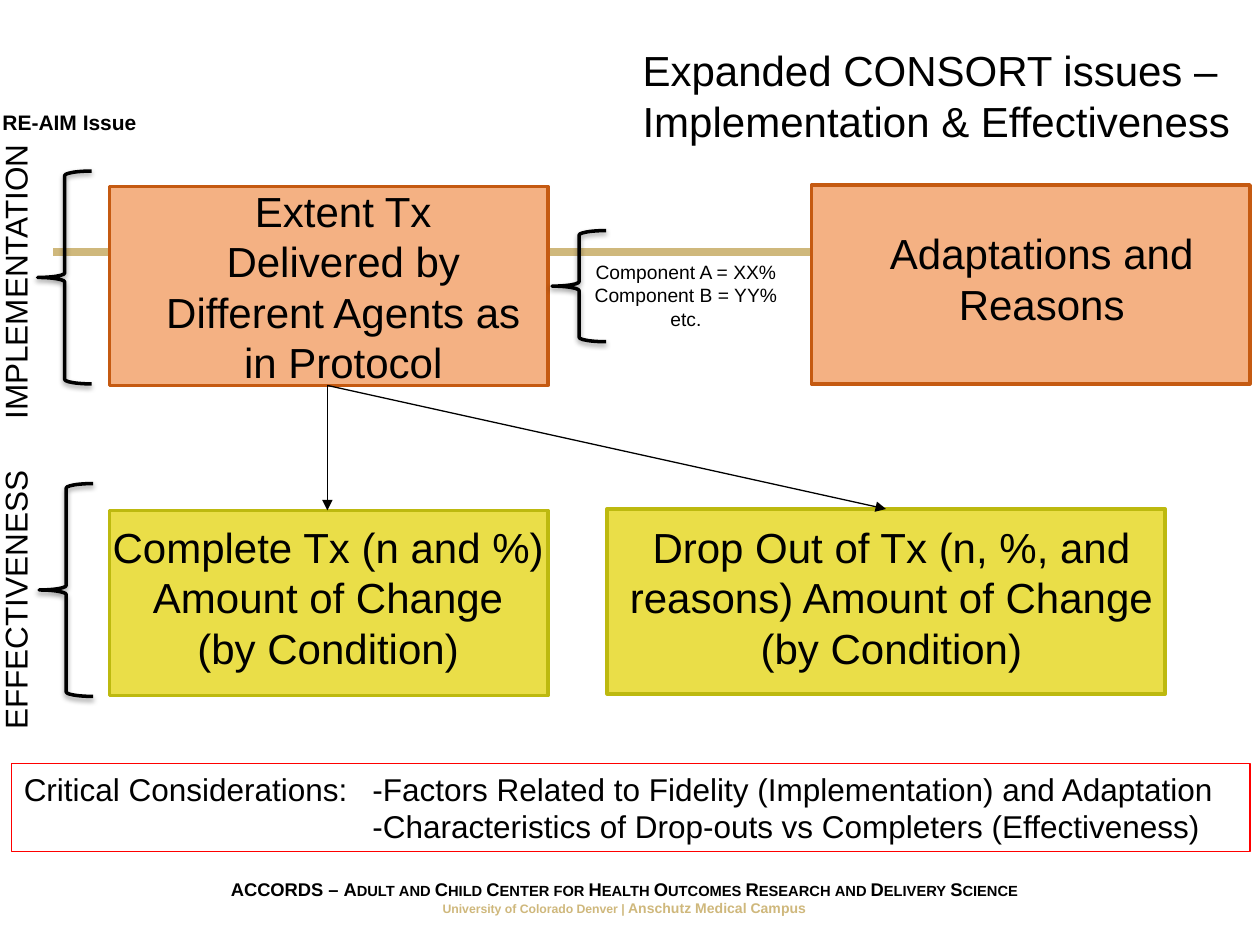
"""Builds the expanded CONSORT slide on implementation and effectiveness."""
import pptx
import pptx.dml.color
import pptx.enum.shapes
import pptx.enum.text
import pptx.oxml
import pptx.oxml.ns
import pptx.util
from pptx.util import Cm

COLORS = {
    "black": "000000", "gold": "CFB87C", "red": "FF0000",
    "orange": "F4B183", "rust": "C55A11", "yellow": "EADE48", "olive": "BDB90F",
}
SHAPES = pptx.enum.shapes.MSO_SHAPE
ALIGN = pptx.enum.text.PP_ALIGN
ANCHOR = pptx.enum.text.MSO_ANCHOR
NAMESPACE = pptx.oxml.ns.nsdecls("a")
SHADOW = (
    f'<a:effectLst {NAMESPACE}><a:outerShdw blurRad="39370" dist="20320" dir="5400000" '
    'rotWithShape="0"><a:srgbClr val="000000"><a:alpha val="38000"/></a:srgbClr>'
    "</a:outerShdw></a:effectLst>"
)


def rgb(name):
    """Return the named colour."""
    return pptx.dml.color.RGBColor.from_string(COLORS[name])


def apply(target, values):
    """Set every attribute in a dict of format values."""
    for name, value in values.items():
        setattr(target, name, value)


def add_span(para, text, size, color="black", bold=False, small_caps=False):
    """Add one formatted run to a paragraph."""
    span = para.add_run()
    span.text = text
    apply(span.font, {"name": "Arial", "size": pptx.util.Pt(size), "bold": bold})
    span.font.color.rgb = rgb(color)
    if small_caps:
        span.font._element.set("cap", "small")


def write(box, lines, align=ALIGN.CENTER, anchor=ANCHOR.TOP, tab=None):
    """Fill a shape with lines, each a list of run formats."""
    frame = box.text_frame
    apply(frame, {"word_wrap": True, "vertical_anchor": anchor,
                  "auto_size": pptx.enum.text.MSO_AUTO_SIZE.NONE})
    for index, spans in enumerate(lines):
        para = frame.add_paragraph() if index else frame.paragraphs[0]
        if tab:
            para._p.get_or_add_pPr().append(pptx.oxml.parse_xml(
                f'<a:tabLst {NAMESPACE}><a:tab pos="{tab}" algn="l"/></a:tabLst>'))
        para.alignment = align
        for span in spans:
            add_span(para, **span)


def plain(size, *texts, **values):
    """Return lines of one run each in a shared format."""
    return [[{"text": text, "size": size, **values}] for text in texts]


def add_label(page, place, lines, upright=False, **values):
    """Add a text box, turned to read upwards if upright."""
    box = page.shapes.add_textbox(*map(Cm, place))
    write(box, lines, **values)
    if upright:
        box.text_frame._txBody.bodyPr.set("vert", "vert270")


def add_panel(page, place, fill, line, weight=2):
    """Add a rectangle, without fill when fill is None."""
    panel = page.shapes.add_shape(SHAPES.RECTANGLE, *map(Cm, place))
    panel.shadow.inherit = False
    if fill:
        panel.fill.solid()
        panel.fill.fore_color.rgb = rgb(fill)
    else:
        panel.fill.background()
    panel.line.color.rgb = rgb(line)
    panel.line.width = pptx.util.Pt(weight)
    return panel


def add_brace(page, left, top, height):
    """Add a black left brace with a soft shadow."""
    brace = page.shapes.add_shape(SHAPES.LEFT_BRACE, Cm(left), Cm(top), Cm(1.09), Cm(height))
    brace.fill.background()
    brace.line.color.rgb = rgb("black")
    brace.line.width = pptx.util.Pt(2)
    brace._element.spPr.append(pptx.oxml.parse_xml(SHADOW))


def add_line(page, ends, color, weight, arrow=False):
    """Add a straight line, with an arrowhead at its end if asked."""
    line = page.shapes.add_connector(pptx.enum.shapes.MSO_CONNECTOR.STRAIGHT, *map(Cm, ends))
    line.line.color.rgb = rgb(color)
    line.line.width = pptx.util.Pt(weight)
    if arrow:
        line.line._get_or_add_ln().append(
            pptx.oxml.parse_xml(f'<a:tailEnd {NAMESPACE} type="triangle"/>'))
    line._element.spPr.append(pptx.oxml.parse_xml(f"<a:effectLst {NAMESPACE}/>"))


def add_title(page):
    """Place and format the title."""
    title = page.shapes.title
    apply(title, {"left": Cm(12.7), "top": Cm(1.07), "width": Cm(15.24), "height": Cm(1.7)})
    write(title, plain(24, "Expanded CONSORT issues – Implementation & Effectiveness"),
          align=ALIGN.LEFT, anchor=ANCHOR.MIDDLE)


def add_footer(page):
    """Add the two centred footer lines."""
    center = {"size": 10.5, "bold": True}
    campus = {"color": "gold", "bold": True}
    add_label(page, (2.01, 17.58, 21.16, 1.02), [
        [{"text": "ACCORDS – ", **center},
         {"text": "Adult and Child Center for Health Outcomes Research and Delivery Science",
          "small_caps": True, **center}],
        [{"text": "University of Colorado Denver | ", "size": 7, **campus},
         {"text": "Anschutz Medical Campus", "size": 8, **campus}],
    ], anchor=ANCHOR.MIDDLE)


def add_considerations(page):
    """Add the outlined box of critical considerations."""
    box = add_panel(page, (0.23, 15.39, 24.97, 1.78), None, "red", 0.75)
    write(box, plain(
        18,
        "Critical Considerations:\t-Factors Related to Fidelity (Implementation) and Adaptation",
        "\t-Characteristics of Drop-outs vs Completers (Effectiveness)",
    ), align=ALIGN.LEFT, tab=Cm(7.03))


def add_steps(page):
    """Add the four coloured steps with their texts."""
    implementation, effectiveness = ("orange", "rust"), ("yellow", "olive")
    condition = "(by Condition)"
    steps = [
        ((2.21, 3.76, 8.84, 4.01), implementation, (3.07, 3.61, 7.7, 4.37),
         ["Extent Tx Delivered by Different Agents as in Protocol"]),
        ((16.36, 3.73, 8.84, 4.01), implementation, (17.15, 4.47, 7.7, 2.31),
         ["Adaptations and Reasons"]),
        ((2.21, 10.29, 8.84, 3.73), effectiveness, (1.8, 10.39, 9.63, 3.33),
         ["Complete Tx (n and %) Amount of Change", condition]),
        ((12.24, 10.26, 11.25, 3.73), effectiveness, (12.24, 10.39, 11.46, 3.33),
         ["Drop Out of Tx (n, %, and reasons) Amount of Change", condition]),
    ]
    for place, colors, text_place, texts in steps:
        add_panel(page, place, *colors)
        add_label(page, text_place, plain(24, *texts))


def add_issues(page):
    """Add the issue heading and the braced row names."""
    add_label(page, (-0.2, 2.08, 3.23, 0.79), plain(12, "RE-AIM Issue", bold=True),
              align=ALIGN.LEFT)
    rows = [("IMPLEMENTATION", 2.46, 0.76, 3.45), ("EFFECTIVENESS", 8.71, 0.79, 9.75)]
    for name, top, brace_left, brace_top in rows:
        add_brace(page, brace_left, brace_top, 4.29)
        add_label(page, (-0.2, top, 1.27, 6.25), plain(18, name),
                  upright=True, align=ALIGN.LEFT)


def main():
    """Build and save the deck."""
    deck = pptx.Presentation()
    apply(deck, {"slide_width": Cm(25.4), "slide_height": Cm(19.05)})
    page = deck.slides.add_slide(deck.slide_layouts[5])
    add_line(page, (1.07, 5.08, 24.33, 5.08), "gold", 4.5)
    add_footer(page)
    add_considerations(page)
    add_steps(page)
    add_brace(page, 11.13, 4.65, 2.24)
    add_label(page, (11.66, 5.13, 4.34, 1.7),
              plain(11, "Component A = XX%", "Component B = YY%", "etc."))
    for end in ((6.6, 10.29), (17.86, 10.26)):
        add_line(page, (6.6, 7.77, *end), "black", 0.75, arrow=True)
    add_issues(page)
    add_title(page)
    deck.save("out.pptx")


if __name__ == "__main__":
    main()
